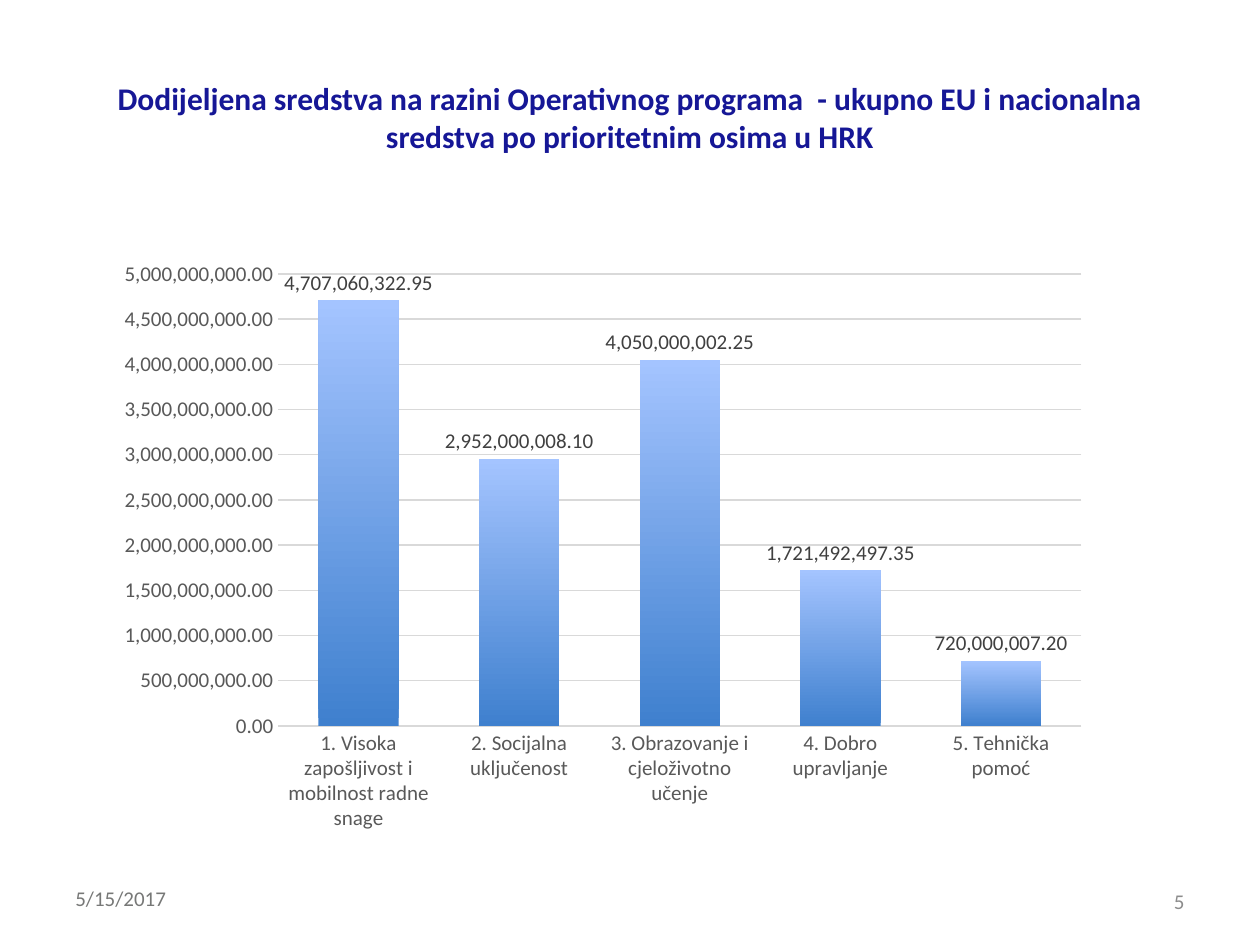
"""Build the slide on funds allocated to each priority axis, with a column chart."""
import lxml.etree
import pptx
import pptx.chart.data
import pptx.dml.color
import pptx.enum.chart
import pptx.enum.text
import pptx.oxml.ns
import pptx.util

Inches = pptx.util.Inches
Pt = pptx.util.Pt
RGBColor = pptx.dml.color.RGBColor
ALIGN = pptx.enum.text.PP_ALIGN
ANCHOR = pptx.enum.text.MSO_ANCHOR

TITLE = ("Dodijeljena sredstva na razini Operativnog programa  - "
         "ukupno EU i nacionalna sredstva po prioritetnim osima u HRK")
FUNDS = {
    "1. Visoka zapošljivost i mobilnost radne snage": 4707060322.95,
    "2. Socijalna uključenost": 2952000008.10,
    "3. Obrazovanje i cjeloživotno učenje": 4050000002.25,
    "4. Dobro upravljanje": 1721492497.35,
    "5. Tehnička pomoć": 720000007.20,
}
PLOT_LAYOUT = {"x": 0.17, "y": 0.12, "w": 0.81, "h": 0.69}
NUMBER_FORMAT = "#,##0.00"
FONT = "Calibri"

NAVY = RGBColor(0x16, 0x17, 0x96)
DATE_GRAY = RGBColor(0x77, 0x78, 0x77)
NUMBER_GRAY = RGBColor(0x8C, 0x8C, 0x8C)
AXIS_GRAY = RGBColor(0x59, 0x59, 0x59)
LABEL_GRAY = RGBColor(0x40, 0x40, 0x40)
LINE_GRAY = RGBColor(0xD9, 0xD9, 0xD9)
BAR_BOTTOM = RGBColor(0x3F, 0x80, 0xCE)
BAR_TOP = RGBColor(0xA4, 0xC4, 0xFF)

FOOTERS = [
    ("5/15/2017", 0.5, 6.98, ALIGN.LEFT, ANCHOR.TOP, DATE_GRAY),
    ("5", 7.17, 6.95, ALIGN.RIGHT, ANCHOR.MIDDLE, NUMBER_GRAY),
]


def style_font(font, color, size=12, bold=False):
    font.name = FONT
    font.size = Pt(size)
    font.bold = bold
    font.color.rgb = color


def fill_text(shape, text, alignment, anchor, color, size=12, bold=False):
    frame = shape.text_frame
    frame.text = text
    frame.word_wrap = True
    frame.auto_size = pptx.enum.text.MSO_AUTO_SIZE.NONE
    frame.vertical_anchor = anchor
    paragraph = frame.paragraphs[0]
    paragraph.alignment = alignment
    style_font(paragraph.runs[0].font, color, size, bold)


def set_plot_layout(chart):
    qualified = pptx.oxml.ns.qn
    plot_area = chart.plots[0]._element.getparent()
    layout = plot_area.find(qualified("c:layout"))
    if layout is None:
        layout = lxml.etree.Element(qualified("c:layout"))
        plot_area.insert(0, layout)
    manual = lxml.etree.SubElement(layout, qualified("c:manualLayout"))
    settings = {"layoutTarget": "inner", "xMode": "edge", "yMode": "edge", **PLOT_LAYOUT}
    for name, value in settings.items():
        lxml.etree.SubElement(manual, qualified(f"c:{name}")).set("val", str(value))


def style_axes(chart):
    for axis in (chart.category_axis, chart.value_axis):
        axis.major_tick_mark = pptx.enum.chart.XL_TICK_MARK.NONE
        axis.minor_tick_mark = pptx.enum.chart.XL_TICK_MARK.NONE
        style_font(axis.tick_labels.font, AXIS_GRAY)
    category_line = chart.category_axis.format.line
    category_line.color.rgb = LINE_GRAY
    category_line.width = Pt(1)
    value_axis = chart.value_axis
    value_axis.minimum_scale = 0
    value_axis.maximum_scale = 5_000_000_000
    value_axis.major_unit = 500_000_000
    value_axis.tick_labels.number_format = NUMBER_FORMAT
    value_axis.tick_labels.number_format_is_linked = False
    value_axis.format.line.fill.background()
    grid_line = value_axis.major_gridlines.format.line
    grid_line.color.rgb = LINE_GRAY
    grid_line.width = Pt(0.75)


def style_columns(plot):
    plot.gap_width = 100
    plot.overlap = -24
    plot.vary_by_categories = False
    series = plot.series[0]
    series.invert_if_negative = False
    fill = series.format.fill
    fill.gradient()
    fill.gradient_angle = 90
    for stop, position, color in zip(fill.gradient_stops, (0, 1), (BAR_BOTTOM, BAR_TOP)):
        stop.position = position
        stop.color.rgb = color
    labels = series.data_labels
    labels.show_value = True
    labels.number_format = NUMBER_FORMAT
    labels.number_format_is_linked = False
    labels.position = pptx.enum.chart.XL_LABEL_POSITION.OUTSIDE_END
    style_font(labels.font, LABEL_GRAY)


def add_funds_chart(slide):
    data = pptx.chart.data.CategoryChartData(number_format=NUMBER_FORMAT)
    data.categories = list(FUNDS)
    data.add_series("Series 1", list(FUNDS.values()))
    chart = slide.shapes.add_chart(
        pptx.enum.chart.XL_CHART_TYPE.COLUMN_CLUSTERED,
        Inches(0.87), Inches(1.55), Inches(7.87), Inches(5.2), data).chart
    chart.has_title = False
    chart.has_legend = False
    chart.font.name = FONT
    chart.font.size = Pt(10)
    set_plot_layout(chart)
    style_axes(chart)
    style_columns(chart.plots[0])


def main():
    presentation = pptx.Presentation()
    presentation.slide_width = Inches(10)
    presentation.slide_height = Inches(7.5)
    slide = presentation.slides.add_slide(presentation.slide_layouts[5])
    title = slide.shapes.title
    title.left, title.top = Inches(0.5), Inches(0.3)
    title.width, title.height = Inches(9), Inches(1.25)
    fill_text(title, TITLE, ALIGN.CENTER, ANCHOR.MIDDLE, NAVY, size=18, bold=True)
    add_funds_chart(slide)
    for text, left, top, alignment, anchor, color in FOOTERS:
        box = slide.shapes.add_textbox(Inches(left), Inches(top), Inches(2.33), Inches(0.4))
        fill_text(box, text, alignment, anchor, color)
    presentation.save("out.pptx")


if __name__ == "__main__":
    main()
